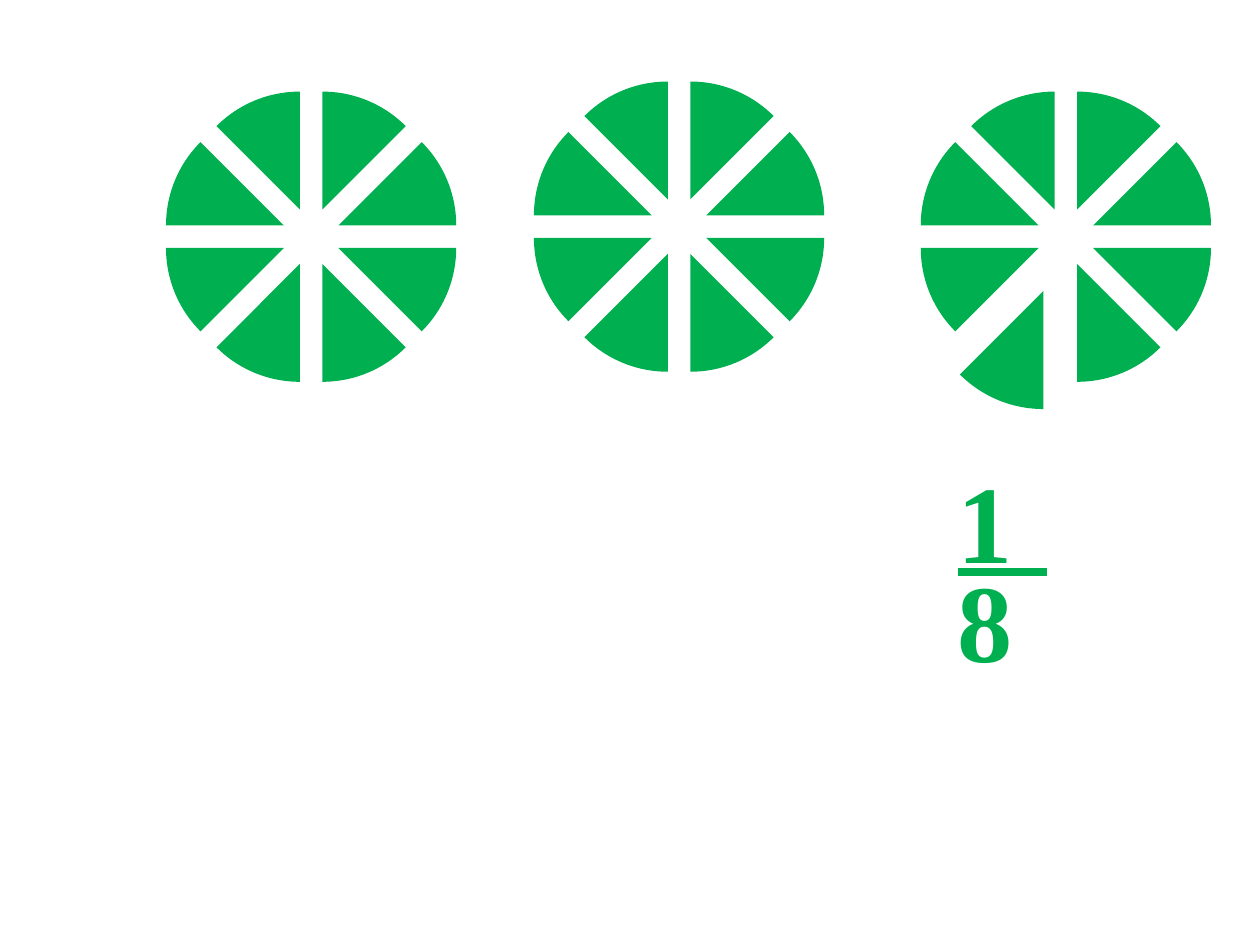
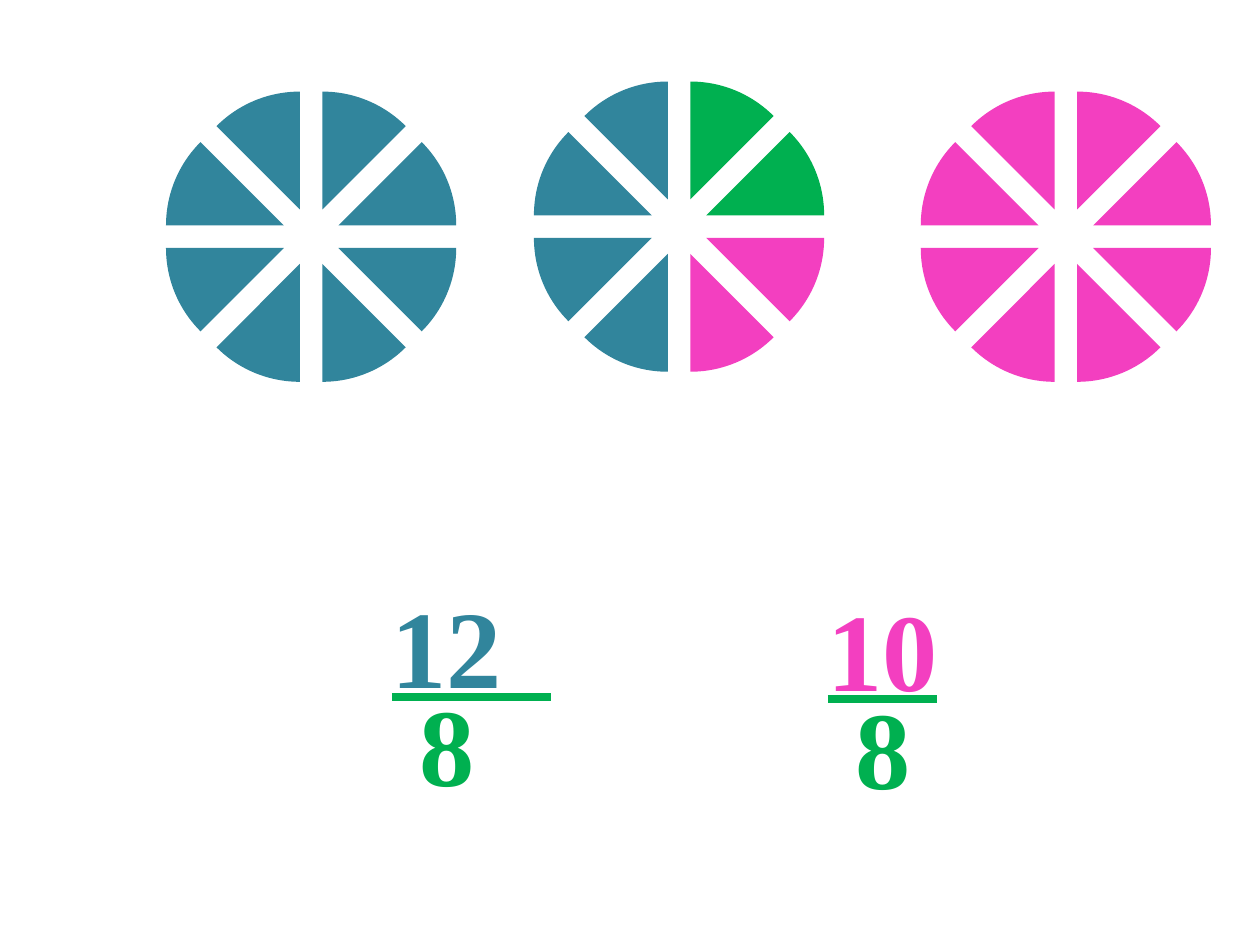
from dataclasses import dataclass

from lxml.etree import SubElement
from pptx import Presentation
from pptx.chart.data import CategoryChartData
from pptx.dml.color import RGBColor
from pptx.enum.chart import XL_CHART_TYPE
from pptx.enum.shapes import MSO_CONNECTOR
from pptx.oxml import parse_xml
from pptx.oxml.ns import nsdecls, qn
from pptx.util import Inches, Pt


@dataclass(frozen=True)
class Theme:
    green: RGBColor = RGBColor(0x00, 0xB0, 0x50)
    teal: RGBColor = RGBColor(0x31, 0x85, 0x9C)
    pink: RGBColor = RGBColor(0xF3, 0x3F, 0xC0)
    digit_font: str = "Times New Roman"
    digit_size: int = 63
    chart_font: str = "Calibri"
    chart_size: int = 18
    bar_width: float = 4.5


THEME = Theme()
PARTS = 8
PIE_SIZE = 2.58
PIE_SPOTS = [(1.06, 0.68), (3.98, 0.6), (7.05, 0.68)]
GAP = 25
PULLED_GAP = 50
LAYOUT = (
    f'<c:layout {nsdecls("c")}><c:manualLayout><c:layoutTarget val="inner"/>'
    '<c:xMode val="edge"/><c:yMode val="edge"/><c:x val="0.093"/>'
    '<c:y val="0.006"/><c:w val="0.907"/><c:h val="0.918"/>'
    "</c:manualLayout></c:layout>"
)


def fix_plot(chart):
    """Pin the inner plot area so that pulled slices do not shrink the pie."""
    area = chart._chartSpace.xpath("c:chart/c:plotArea")[0]
    for old in area.findall(qn("c:layout")):
        area.remove(old)
    area.insert(0, parse_xml(LAYOUT))


def explode(series, pulled):
    """Spread all slices, and move the pulled one further out."""
    points = series._element.findall(qn("c:dPt"))
    for index, point in enumerate(points):
        gap = SubElement(point, qn("c:explosion"))
        gap.set("val", str(PULLED_GAP if index == pulled else GAP))
        point.find(qn("c:spPr")).addprevious(gap)
    gap = SubElement(series._element, qn("c:explosion"))
    gap.set("val", str(GAP))
    points[0].addprevious(gap)


def add_pie(slide, spot, colors, pulled=None):
    data = CategoryChartData()
    data.categories = [str(n + 1) for n in range(PARTS)]
    data.add_series("Series 1", [12] * PARTS)
    left, top = spot
    chart = slide.shapes.add_chart(
        XL_CHART_TYPE.PIE, Inches(left), Inches(top),
        Inches(PIE_SIZE), Inches(PIE_SIZE), data).chart
    chart.has_legend = False
    chart.has_title = False
    chart.font.name = THEME.chart_font
    chart.font.size = Pt(THEME.chart_size)
    chart.font.color.rgb = RGBColor(0, 0, 0)
    series = chart.plots[0].series[0]
    for index, color in enumerate(colors):
        look = series.points[index].format
        look.fill.solid()
        look.fill.fore_color.rgb = color
        look.line.fill.background()
    explode(series, pulled)
    fix_plot(chart)


def add_digits(shapes, text, left, top, width, color, indent=0):
    box = shapes.add_textbox(Inches(left), Inches(top), Inches(width), Inches(1.06))
    frame = box.text_frame
    frame.word_wrap = True
    frame.margin_left = Inches(indent)
    frame.margin_right = frame.margin_top = frame.margin_bottom = 0
    run = frame.paragraphs[0].add_run()
    run.text = text
    run.font.name = THEME.digit_font
    run.font.size = Pt(THEME.digit_size)
    run.font.bold = True
    run.font.color.rgb = color


def add_fraction(slide, left, top, bar, width, count, color, indent=0):
    """Stack count over the number of parts; bar is the length of the line."""
    shapes = slide.shapes.add_group_shape().shapes
    level = Inches(top + 0.94)
    line = shapes.add_connector(
        MSO_CONNECTOR.STRAIGHT, Inches(left), level, Inches(left + bar), level)
    line.line.color.rgb = THEME.green
    line.line.width = Pt(THEME.bar_width)
    SubElement(line._element.spPr, qn("a:effectLst"))
    add_digits(shapes, str(PARTS), left, top + 0.78, width, THEME.green, indent)
    add_digits(shapes, str(count), left, top, width, color)


def add_slide(deck, pies, pulled=(None, None, None)):
    slide = deck.slides.add_slide(deck.slide_layouts[6])
    for spot, colors, index in zip(PIE_SPOTS, pies, pulled):
        add_pie(slide, spot, colors, index)
    return slide


def main():
    deck = Presentation()
    deck.slide_width, deck.slide_height = Inches(10), Inches(7.5)
    green, teal, pink = THEME.green, THEME.teal, THEME.pink

    unit = add_slide(deck, [[green] * PARTS] * 3, (None, None, 4))
    add_fraction(unit, 7.6, 3.6, 0.71, 0.58, 1, green)

    mixed = [green] * 2 + [pink] * 2 + [teal] * 4
    parts = add_slide(deck, [[teal] * PARTS, mixed, [pink] * PARTS])
    add_fraction(parts, 3.11, 4.59, 1.26, 0.91, 12, teal, 0.22)
    add_fraction(parts, 6.57, 4.61, 0.87, 1.02, 10, pink, 0.22)

    deck.save("out.pptx")


if __name__ == "__main__":
    main()
